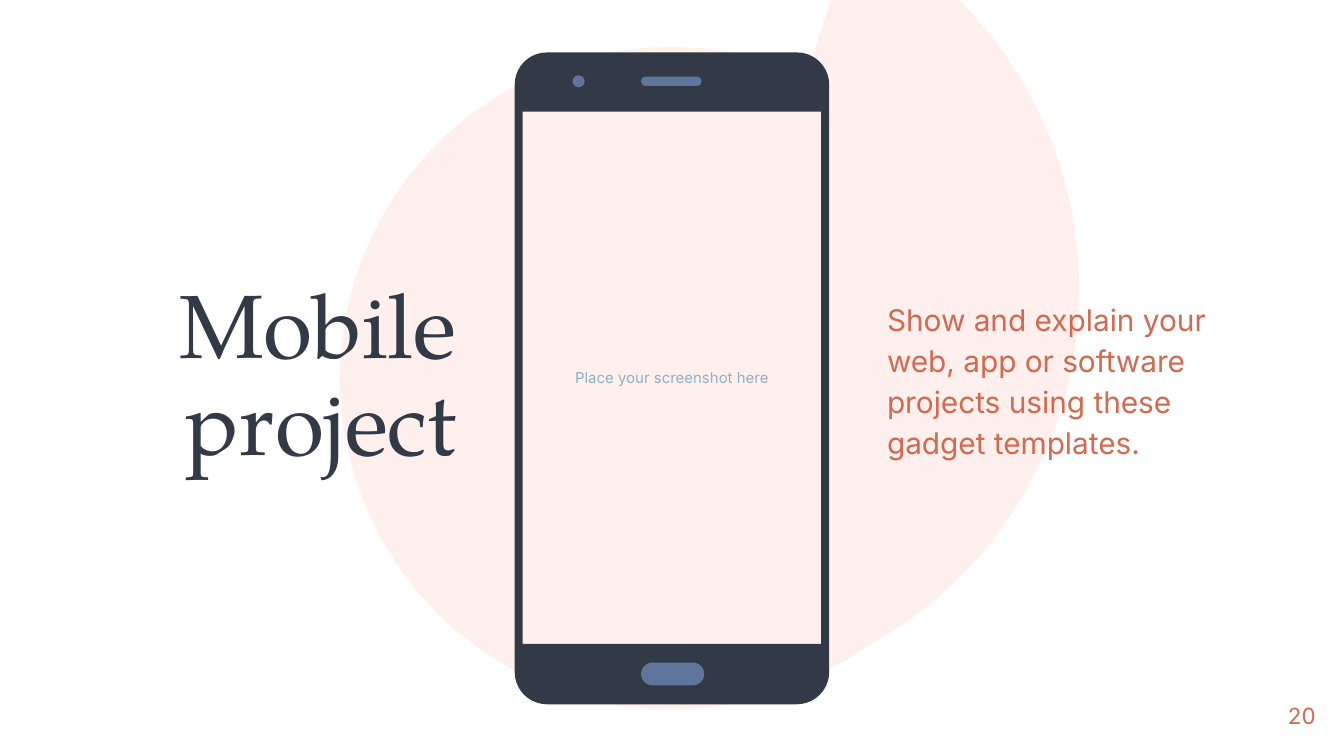
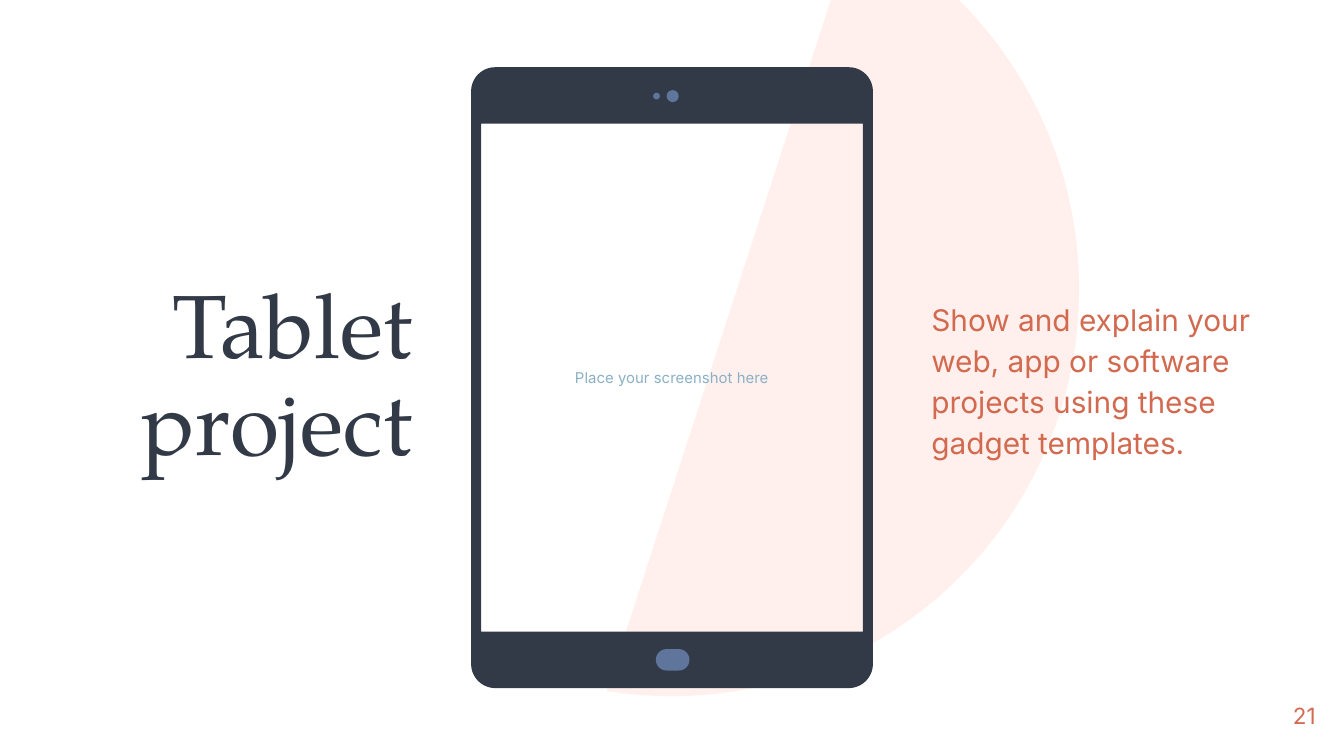
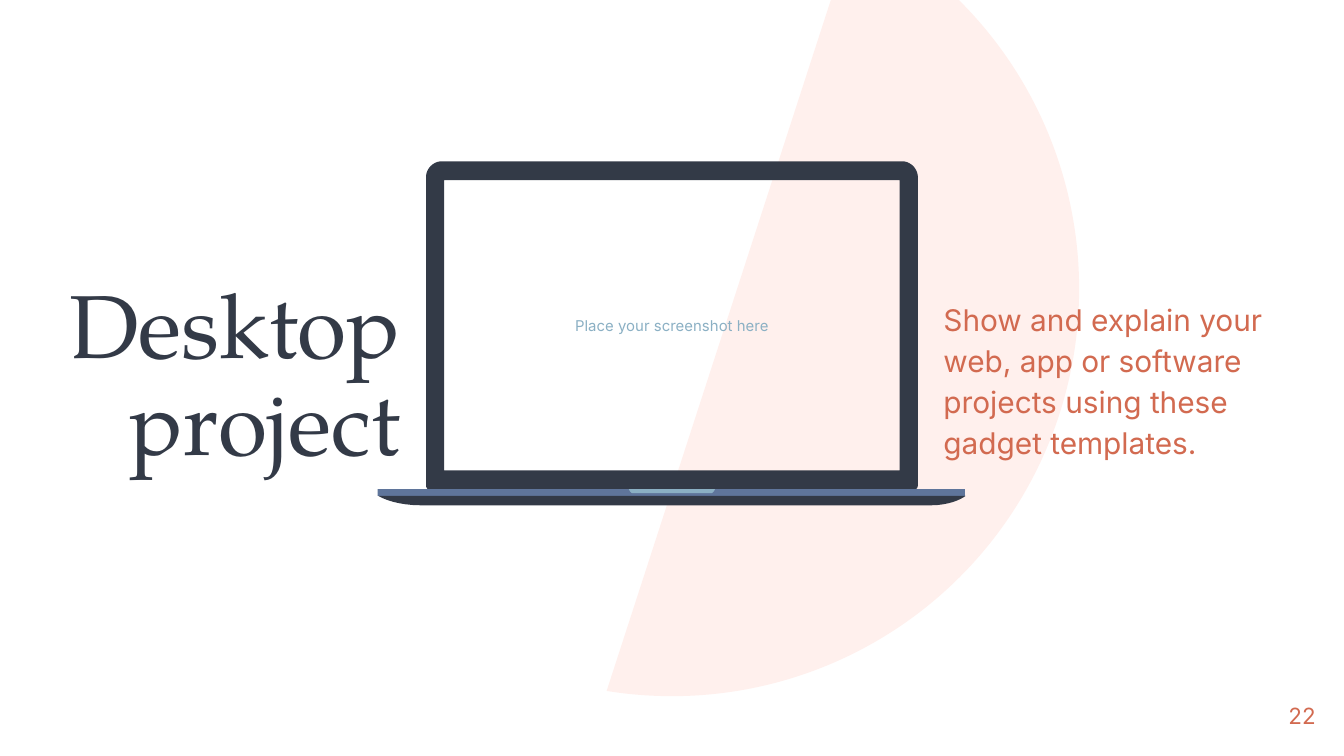
from math import cos, radians, sin

from pptx import Presentation
from pptx.dml.color import RGBColor
from pptx.enum.shapes import MSO_SHAPE
from pptx.enum.text import MSO_ANCHOR, MSO_AUTO_SIZE, PP_ALIGN
from pptx.oxml.ns import qn
from pptx.util import Inches, Pt

WIDE, MID = 10, 5
INK = {"dark": "333A47", "blue": "5F759B", "sky": "8BB0C4",
       "rust": "D26A50", "blush": "FFF0ED"}
SERIF, SANS = "TeX Gyre Pagella", "Inter"
OVAL, PILL, BAR = MSO_SHAPE.OVAL, MSO_SHAPE.ROUNDED_RECTANGLE, MSO_SHAPE.RECTANGLE
BLURB = "Show and explain your web, app or software projects using these gadget templates."
LABEL = "Place your screenshot here"
FIRST = 20
TEXT_TOP, TEXT_W, TEXT_H = 0.41, 2.63, 4.81

DEVICES = [
    {"title": "Mobile project", "margin": 0.77, "glow": True,
     "case": (2.34, 0.39, 4.85), "round": (0.24, 0.24),
     "screen": (2.22, 0.83, 3.96),
     "parts": [(PILL, 4.77, 4.93, 0.47, 0.17, "blue"),
               (OVAL, 4.26, 0.56, 0.09, 0.09, "blue"),
               (PILL, 4.77, 0.57, 0.45, 0.07, "blue")],
     "hulls": []},
    {"title": "Tablet project", "margin": 0.44, "glow": False,
     "case": (2.99, 0.5, 4.62), "round": (0.18, 0.18),
     "screen": (2.84, 0.92, 3.78),
     "parts": [(PILL, 4.88, 4.83, 0.25, 0.16, "blue"),
               (OVAL, 4.86, 0.69, 0.05, 0.05, "blue"),
               (OVAL, 4.96, 0.67, 0.09, 0.09, "blue")],
     "hulls": []},
    {"title": "Desktop\vproject", "margin": 0.35, "glow": False,
     "case": (3.66, 1.2, 2.45), "round": (0.12, 0.04),
     "screen": (3.39, 1.34, 2.16),
     "parts": [(BAR, 2.81, 3.64, 4.37, 0.05, "blue")],
     "hulls": [(4.37, 3.69, 0.07, 0.32, 0.26, "dark"),
               (0.64, 3.64, 0.03, 0.03, 0.03, "sky")]},
]


def tint(shape, color):
    shape.shadow.inherit = False
    shape.fill.solid()
    shape.fill.fore_color.rgb = RGBColor.from_string(INK[color])
    shape.line.fill.background()
    return shape


def place(shape, *box):
    shape.left, shape.top, shape.width, shape.height = map(Inches, box)
    return shape


def write(shape, text, size, color, font=SANS, align=PP_ALIGN.LEFT, space=1.0, inset=0):
    frame = shape.text_frame
    frame.text = text
    frame.word_wrap = True
    frame.auto_size = MSO_AUTO_SIZE.NONE
    frame.vertical_anchor = MSO_ANCHOR.MIDDLE
    frame.margin_left = frame.margin_right = Inches(inset)
    frame.margin_top = frame.margin_bottom = Inches(inset)
    para = frame.paragraphs[0]
    para.alignment, para.line_spacing = align, space
    para.space_before = para.space_after = Pt(0)
    if shape.is_placeholder:
        props = para._p.get_or_add_pPr()
        props.set("marL", "0")
        props.set("indent", "0")
        props.append(props.makeelement(qn("a:buNone"), {}))
    for run in para.runs:
        run.font.name, run.font.size = font, Pt(size)
        run.font.color.rgb = RGBColor.from_string(INK[color])


def add(shapes, kind, x, y, w, h, color):
    shape = tint(shapes.add_shape(kind, *map(Inches, (x, y, w, h))), color)
    if kind == PILL:
        shape.adjustments[0] = 0.5
    return shape


def draw(shapes, color, *rings):
    rings = [[(Inches(x), Inches(y)) for x, y in ring] for ring in rings]
    pen = shapes.build_freeform(*rings[0][0], scale=1.0)
    for ring in rings:
        pen.move_to(*ring[0])
        pen.add_line_segments(ring[1:], close=True)
    return tint(pen.convert_to_shape(), color)


def curved(x, y, w, h, top, low):
    right, base = x + w, y + h
    turns = [(right - top, y + top, top, -90), (right - low, base - low, low, 0),
             (x + low, base - low, low, 90), (x + top, y + top, top, 180)]
    return [(cx + r * cos(radians(start + step)), cy + r * sin(radians(start + step)))
            for cx, cy, r, start in turns for step in range(0, 91, 9)]


def bend(edge, y, run, h):
    steps = [n / 10 for n in range(11)]
    return [(edge + run * (t * t * (1 - t) + t ** 3), y + h * (3 * t * t - 2 * t ** 3))
            for t in steps]


def circle(slide, device):
    chord = add(slide.shapes, MSO_SHAPE.CHORD, 1.97, -0.88, 6.06, 6.06, "blush")
    chord.adjustments[0], chord.adjustments[1] = 16.04, 113.53
    chord.rotation = 270
    backs = [chord]
    if device["glow"]:
        backs.append(add(slide.shapes, OVAL, 2.53, 0.35, 4.93, 4.93, "blush"))
    for back in backs:
        slide.shapes._spTree.insert(2, back._element)


def gadget(slide, device):
    group = slide.shapes.add_group_shape().shapes
    w, y, h = device["case"]
    sw, sy, sh = device["screen"]
    left, right = MID - sw / 2, MID + sw / 2
    hole = [(right, sy), (right, sy + sh), (left, sy + sh), (left, sy)]
    draw(group, "dark", hole, curved(MID - w / 2, y, w, h, *device["round"]))
    for part in device["parts"]:
        add(group, *part)
    for w, y, h, near, far, color in device["hulls"]:
        port = bend(MID - w / 2, y, near, h)
        star = bend(MID + w / 2, y, -far, h)
        draw(group, color, port + star[::-1])
    box = slide.shapes.add_textbox(*map(Inches, (left, sy, sw, sh)))
    write(box, LABEL, 8, "sky", align=PP_ALIGN.CENTER, inset=0.1)


def main():
    deck = Presentation()
    deck.slide_width = Inches(WIDE)
    deck.slide_height = Inches(WIDE) * 9 // 16
    for number, device in enumerate(DEVICES, FIRST):
        slide = deck.slides.add_slide(deck.slide_layouts[1])
        title, body = slide.placeholders
        edge = device["margin"]
        place(title, edge, TEXT_TOP, TEXT_W, TEXT_H)
        write(title, device["title"], 48, "dark", font=SERIF,
              align=PP_ALIGN.RIGHT, space=0.9)
        place(body, WIDE - edge - TEXT_W, TEXT_TOP, TEXT_W, TEXT_H)
        write(body, BLURB, 16, "rust", space=1.15)
        circle(slide, device)
        gadget(slide, device)
        page = slide.shapes.add_textbox(*map(Inches, (9.19, 5.11, 0.6, 0.43)))
        write(page, str(number), 12, "rust", align=PP_ALIGN.RIGHT)
    deck.save("out.pptx")


if __name__ == "__main__":
    main()
